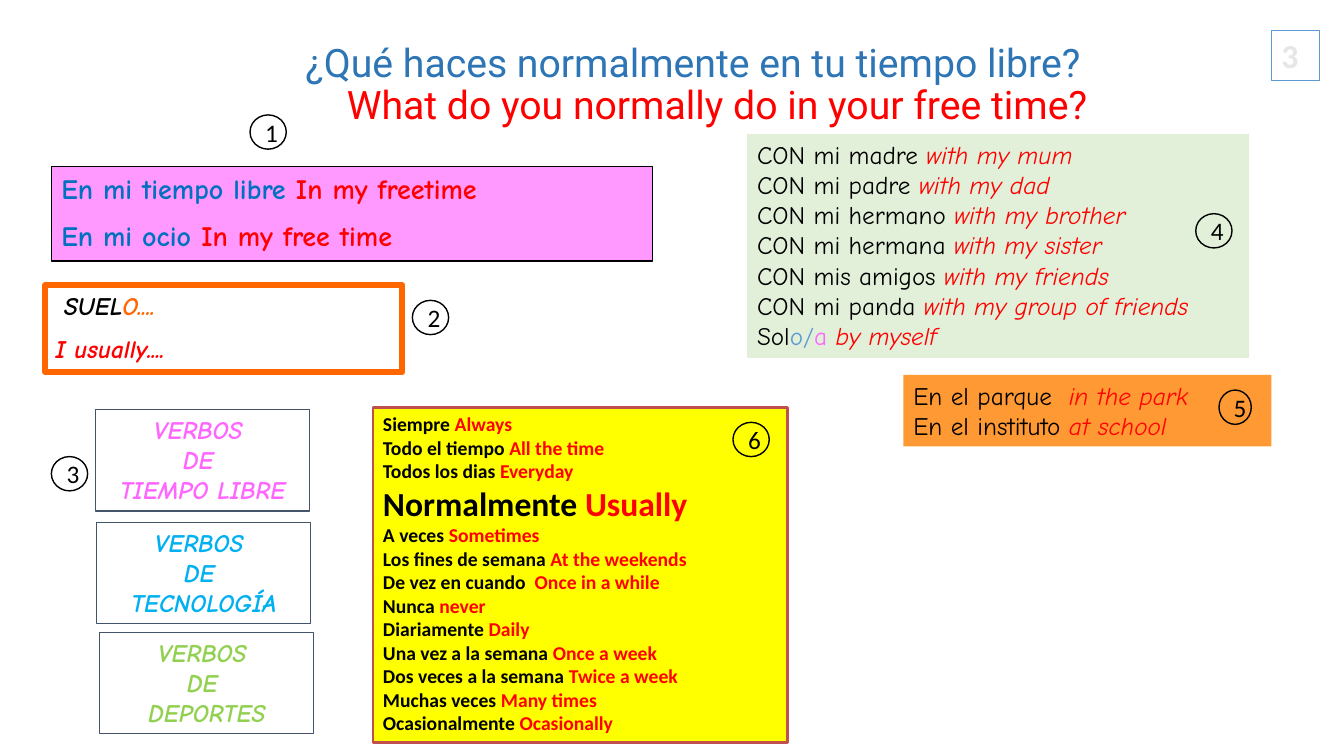
import pptx
import pptx.dml.color
import pptx.enum.shapes
import pptx.enum.text
import pptx.util

Inches = pptx.util.Inches
Pt = pptx.util.Pt
ALIGN = pptx.enum.text.PP_ALIGN
ANCHOR = pptx.enum.text.MSO_ANCHOR
SHAPE = pptx.enum.shapes.MSO_SHAPE


class Theme:
    HEADING, HAND, PLAIN = "Roboto", "Comic Neue", "Calibri"
    TITLE, BIG, MEDIUM, BODY, SMALL = 28, 24, 20, 18, 14
    BLACK, RED, ORANGE = "000000", "FF0000", "FF6600"
    TITLE_BLUE, BLUE, SKY, CYAN = "2E75B6", "0070C0", "5B9BD5", "00B0F0"
    PINK, GREEN, SLATE, BRICK = "FF66FF", "92D050", "44546A", "C0504D"
    PALE_GREY = "E7E6E6"
    PINK_FILL, GREEN_FILL = "FF99FF", "E2F0D9"
    ORANGE_FILL, YELLOW_FILL = "FF9933", "FFFF00"


def rgb(color):
    return pptx.dml.color.RGBColor.from_string(color)


class SlideBuilder:
    def __init__(self, slide, theme):
        self.slide = slide
        self.theme = theme

    def fill_text(self, tf, paragraphs, font, size, bold=False, align=ALIGN.LEFT,
                  anchor=ANCHOR.TOP, space=0):
        """Each paragraph is a list of (text, colour, italic, optional size)."""
        tf.word_wrap = True
        tf.vertical_anchor = anchor
        for i, runs in enumerate(paragraphs):
            p = tf.add_paragraph() if i else tf.paragraphs[0]
            p.alignment = align
            p.space_before = Pt(space)
            for text, color, italic, *own_size in runs:
                r = p.add_run()
                r.text = text
                r.font.name = font
                r.font.size = Pt(own_size[0] if own_size else size)
                r.font.bold = bold
                r.font.italic = italic
                r.font.color.rgb = rgb(color)

    def shape(self, kind, at, fill=None, line=None, width=0.75):
        sp = self.slide.shapes.add_shape(kind, *map(Inches, at))
        sp.shadow.inherit = False
        if fill:
            sp.fill.solid()
            sp.fill.fore_color.rgb = rgb(fill)
        else:
            sp.fill.background()
        if line:
            sp.line.color.rgb = rgb(line)
            sp.line.width = Pt(width)
        else:
            sp.line.fill.background()
        return sp

    def panel(self, at, paragraphs, font, size, fill=None, line=None,
              width=0.75, **text_style):
        sp = self.shape(SHAPE.RECTANGLE, at, fill, line, width)
        self.fill_text(sp.text_frame, paragraphs, font, size, **text_style)

    def badge(self, number, left, top, width=0.36):
        t = self.theme
        sp = self.shape(SHAPE.OVAL, (left, top, width, 0.34), line=t.BLACK, width=1)
        self.fill_text(sp.text_frame, [[(str(number), t.BLACK, False)]], t.PLAIN,
                       t.BODY, align=ALIGN.CENTER, anchor=ANCHOR.MIDDLE)

    def title(self, at, spanish, english):
        t = self.theme
        tf = self.slide.shapes.add_textbox(*map(Inches, at)).text_frame
        self.fill_text(tf, [[(spanish, t.TITLE_BLUE, False)]], t.HEADING, t.TITLE,
                       align=ALIGN.CENTER, anchor=ANCHOR.BOTTOM)
        p = tf.paragraphs[0]
        p.line_spacing = 0.9
        p.add_line_break()
        r = p.add_run()
        r.text = english
        r.font.name = t.HEADING
        r.font.size = Pt(t.TITLE)
        r.font.color.rgb = rgb(t.RED)
        # Hanging indent
        pPr = p._p.get_or_add_pPr()
        pPr.set("marL", str(Inches(0.38)))
        pPr.set("indent", str(Inches(-0.38)))


def bilingual(pairs, color, italic=False):
    return [[(spanish, color, False), (english, Theme.RED, italic)]
            for spanish, english in pairs]


def main():
    prs = pptx.Presentation()
    prs.slide_width, prs.slide_height = Inches(13.33), Inches(7.5)
    t = Theme()
    b = SlideBuilder(prs.slides.add_slide(prs.slide_layouts[6]), t)

    # Title and page number
    b.title((2.42, 0.37, 9, 0.95), "¿Qué haces normalmente en tu tiempo libre? ",
            "What do you normally do in your free time?")
    b.panel((12.61, 0.3, 0.48, 0.5), [[("3", t.PALE_GREY, False)]], t.PLAIN, t.BIG,
            line=t.SKY, bold=True, anchor=ANCHOR.MIDDLE)

    # Sentence openers
    openers = [("En mi tiempo libre ", "In my freetime"),
               ("En mi ocio ", "In my free time")]
    b.panel((0.51, 1.65, 5.96, 0.94), bilingual(openers, t.BLUE), t.HAND, t.MEDIUM,
            fill=t.PINK_FILL, line=t.BLACK, bold=True, space=10)
    usually = [[(" SUEL", t.BLACK, True), ("O....", t.ORANGE, True)],
               [("I usually....", t.RED, True)]]
    b.panel((0.45, 2.83, 3.54, 0.86), usually, t.HAND, t.BODY,
            line=t.ORANGE, width=4.5, bold=True, space=9)

    # Verb groups
    for left, top, topic, color in [(0.95, 4.06, "TIEMPO LIBRE", t.PINK),
                                    (0.96, 5.18, "TECNOLOGÍA", t.CYAN),
                                    (0.99, 6.27, "DEPORTES", t.GREEN)]:
        lines = [[(text, color, True)] for text in ("VERBOS ", "DE ", topic)]
        b.panel((left, top, 2.12, 1.01), lines, t.HAND, t.BODY,
                line=t.SLATE, bold=True, align=ALIGN.CENTER)

    # Company
    people = [("CON mi madre ", "with my mum"),
              ("CON mi padre ", "with my dad"),
              ("CON mi hermano ", "with my brother"),
              ("CON mi hermana ", "with my sister"),
              ("CON mis amigos ", "with my friends"),
              ("CON mi panda ", "with my group of friends")]
    alone = [("Sol", t.BLACK, False), ("o/", t.SKY, False),
             ("a ", t.PINK, False), ("by myself", t.RED, True)]
    b.panel((7.41, 1.33, 4.98, 2.22), bilingual(people, t.BLACK, True) + [alone],
            t.HAND, t.BODY, fill=t.GREEN_FILL)

    # Places
    places = [("En el parque  ", "in the park"),
              ("En el instituto ", "at school")]
    b.panel((8.96, 3.72, 3.65, 0.71), bilingual(places, t.BLACK, True),
            t.HAND, t.BODY, fill=t.ORANGE_FILL)

    # Frequency
    often = [("Siempre ", "Always"),
             ("Todo el tiempo ", "All the time"),
             ("Todos los dias ", "Everyday")]
    normally = [("Normalmente ", t.BLACK, False, t.BIG),
                ("Usually", t.RED, False, t.BIG)]
    seldom = [("A veces ", "Sometimes"),
              ("Los fines de semana ", "At the weekends"),
              ("De vez en cuando  ", "Once in a while"),
              ("Nunca ", "never"),
              ("Diariamente ", "Daily"),
              ("Una vez a la semana ", "Once a week"),
              ("Dos veces a la semana ", "Twice a week"),
              ("Muchas veces ", "Many times"),
              ("Ocasionalmente ", "Ocasionally")]
    b.panel((3.7, 4.04, 4.11, 3.33),
            bilingual(often, t.BLACK) + [normally] + bilingual(seldom, t.BLACK),
            t.PLAIN, t.SMALL, fill=t.YELLOW_FILL, line=t.BRICK, width=2, bold=True)

    # Numbered badges
    badges = [(2.48, 1.14), (4.09, 2.98), (0.51, 4.53),
              (11.86, 2.12), (12.09, 3.87, 0.32), (7.27, 4.19)]
    for number, place in enumerate(badges, 1):
        b.badge(number, *place)

    prs.save("out.pptx")


if __name__ == "__main__":
    main()
